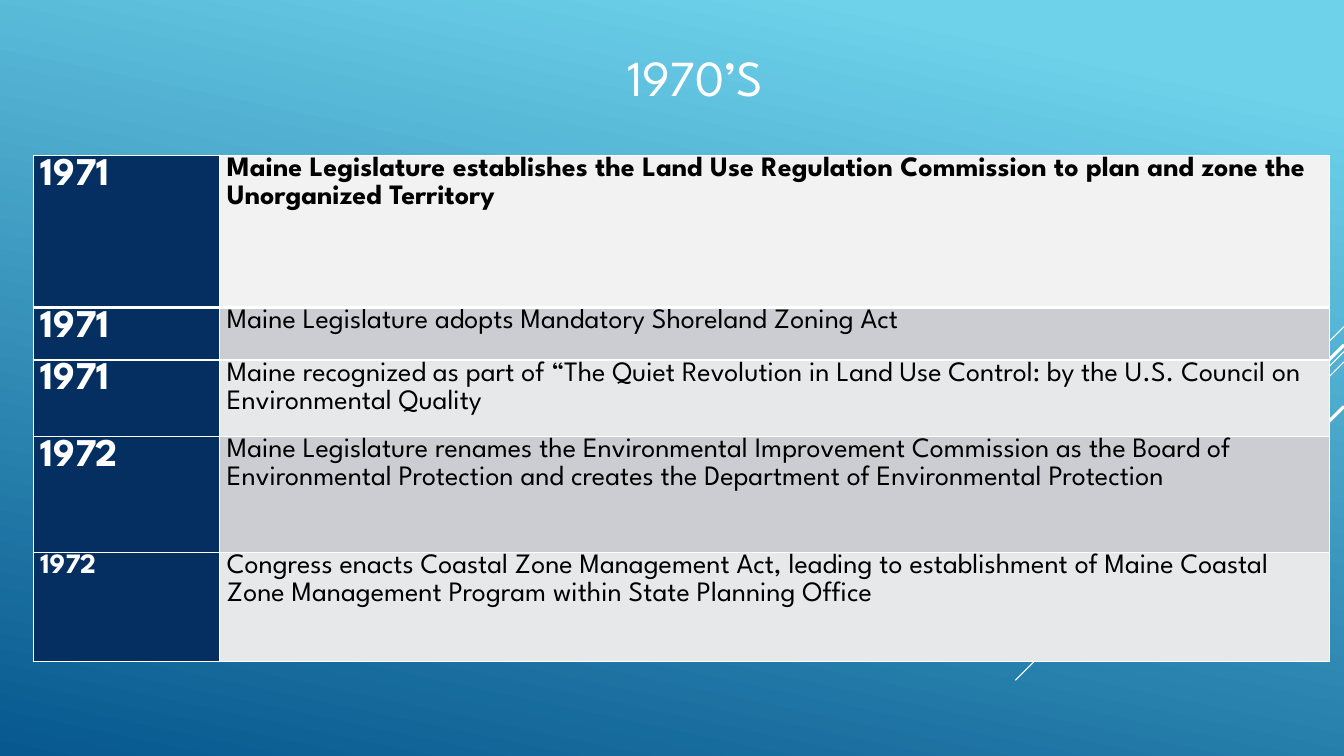
from lxml import etree
from pptx import Presentation
from pptx import util as u
from pptx.dml.color import RGBColor
from pptx.enum import shapes, text
from pptx.oxml import ns

HUES = {
    "white": "FFFFFF", "black": "000000", "navy": "052F61",
    "sky": "6ED2EB", "sea": "06588E",
    "head": "F2F2F2", "dark": "CCCDD2", "light": "E7E8EA",
}
# top at the right edge, run of the diagonal (cm), weight (pt)
RAYS = [
    (8.23, 2.54, 0.75), (8.86, 8.28, 0.75), (9.12, 5.26, 0.75),
    (8.69, 4.85, 2.25), (10.24, 3.53, 2.25),
]
# height (cm), year, year size, event
EVENTS = [
    (3.84, "1971", 28, "Maine Legislature establishes the Land Use Regulation "
     "Commission to plan and zone the Unorganized Territory"),
    (1.32, "1971", 28, "Maine Legislature adopts Mandatory Shoreland Zoning Act"),
    (1.93, "1971", 28, "Maine recognized as part of “The Quiet Revolution in Land Use "
     "Control: by the U.S. Council on Environmental Quality"),
    (2.92, "1972", 28, "Maine Legislature renames the Environmental Improvement "
     "Commission as the Board of Environmental Protection and creates the "
     "Department of Environmental Protection"),
    (2.74, "1972", 20, "Congress enacts Coastal Zone Management Act, leading to "
     "establishment of Maine Coastal Zone Management Program within State "
     "Planning Office"),
]
WIDE, HIGH = 33.87, 19.05


def hue(name):
    return RGBColor.from_string(HUES[name])


class Deck:
    """Holds the style and the current slide."""

    font = "League Spartan"

    def __init__(self):
        self.prs = Presentation()
        self.prs.slide_width, self.prs.slide_height = u.Cm(WIDE), u.Cm(HIGH)
        self.slide = self.prs.slides.add_slide(self.prs.slide_layouts[6])

    def wash(self, first, last, angle):
        """Fill the background with a clockwise-angled gradient."""
        fill = self.slide.background.fill
        fill.gradient()
        fill.gradient_angle = 360 - angle
        for stop, name, place in zip(fill.gradient_stops, (first, last), (0.1, 1)):
            stop.color.rgb = hue(name)
            stop.position = place

    def ray(self, top, run, weight):
        """Draw a 45 degree line down and left from the right edge."""
        line = self.slide.shapes.add_connector(
            shapes.MSO_CONNECTOR.STRAIGHT,
            u.Cm(WIDE), u.Cm(top), u.Cm(WIDE - run), u.Cm(top + run))
        line.line.color.rgb = hue("white")
        line.line.width = u.Pt(weight)
        etree.SubElement(line._element.spPr, ns.qn("a:effectLst"))

    def run(self, para, words, size, color, bold=False):
        """Add one styled run to a paragraph."""
        run = para.add_run()
        run.text = words
        run.font.name, run.font.size, run.font.bold = self.font, u.Pt(size), bold
        run.font.color.rgb = hue(color)

    def title(self, words, left, top, width, height):
        box = self.slide.shapes.add_textbox(*map(u.Cm, (left, top, width, height)))
        frame = box.text_frame
        frame.word_wrap = True
        frame.vertical_anchor = text.MSO_ANCHOR.MIDDLE
        frame.paragraphs[0].alignment = text.PP_ALIGN.CENTER
        self.run(frame.paragraphs[0], words, 36, "white")

    def edge(self, cell, side, weight):
        props = cell._tc.get_or_add_tcPr()
        line = etree.SubElement(props, ns.qn("a:ln" + side), w=str(u.Pt(weight)))
        fill = etree.SubElement(line, ns.qn("a:solidFill"))
        etree.SubElement(fill, ns.qn("a:srgbClr"), val=HUES["white"])

    def cell(self, cell, words, size, color, bold, fill, rims):
        cell.margin_left = cell.margin_right = u.Cm(0.18)
        cell.margin_top = cell.margin_bottom = 0
        for side, weight in zip("LRTB", rims):
            self.edge(cell, side, weight)
        cell.fill.solid()
        cell.fill.fore_color.rgb = hue(fill)
        para = cell.text_frame.paragraphs[0]
        para.line_spacing = 1.07
        self.run(para, words, size, color, bold)

    def table(self, events, left, top, widths):
        high = sum(event[0] for event in events)
        grid = self.slide.shapes.add_table(
            len(events), len(widths),
            *map(u.Cm, (left, top, sum(widths), high))).table
        grid.first_row = grid.horz_banding = False
        for col, width in zip(grid.columns, widths):
            col.width = u.Cm(width)
        for i, (tall, year, size, event) in enumerate(events):
            grid.rows[i].height = u.Cm(tall)
            first = i == 0
            rims = (1, 1, 3 if i == 1 else 1, 3 if first else 1)
            band = "head" if first else "dark" if i % 2 else "light"
            self.cell(grid.cell(i, 0), year, size, "white", True, "navy", rims)
            self.cell(grid.cell(i, 1), event, 20, "black", first, band, rims)


def main():
    deck = Deck()
    deck.wash("sky", "sea", 102)
    for ray in RAYS:
        deck.ray(*ray)
    deck.table(EVENTS, 0.84, 3.91, (4.7, 27.96))
    deck.title("1970’S", 5.82, 1.02, 23.39, 1.8)
    deck.prs.save("out.pptx")


if __name__ == "__main__":
    main()
